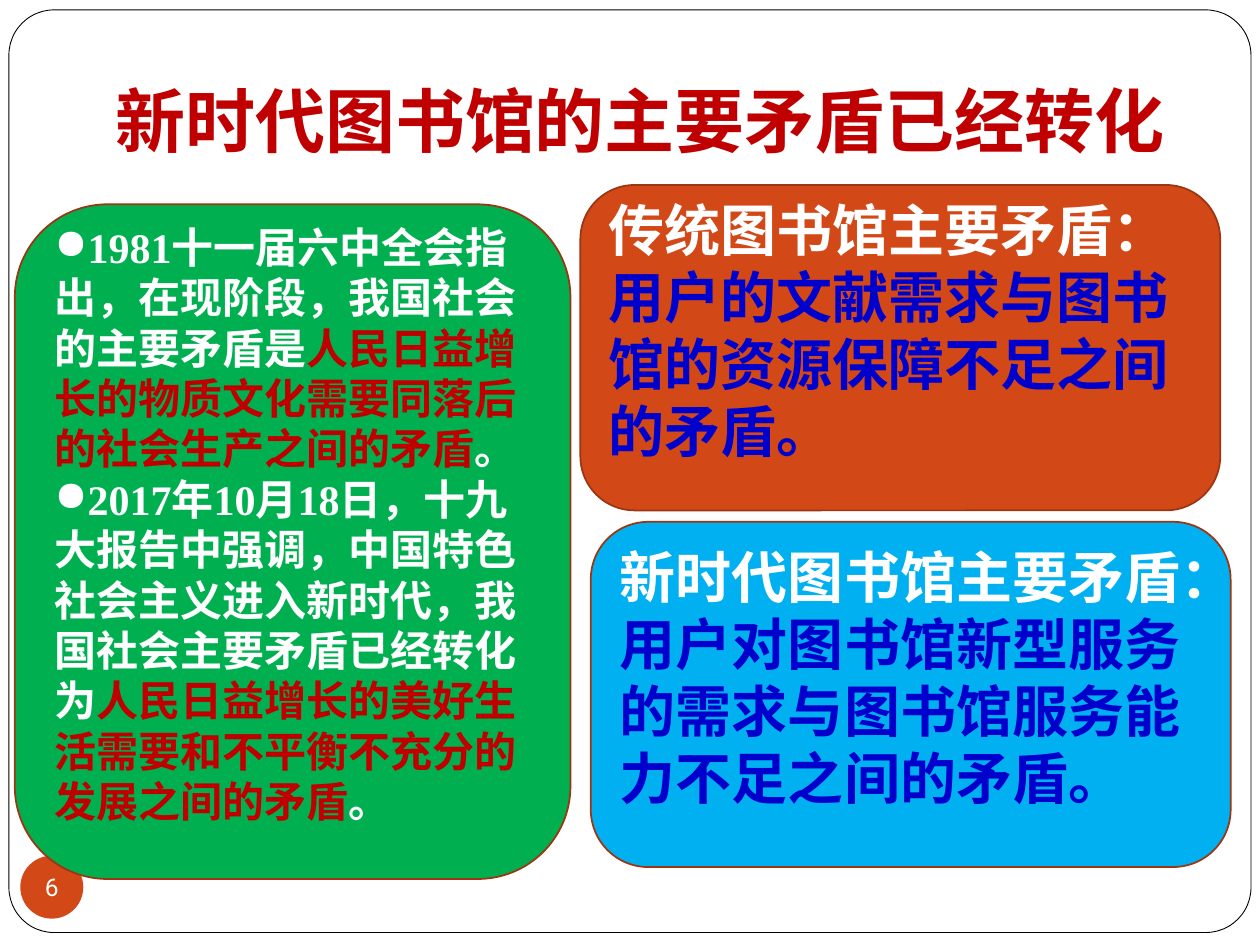
from lxml import etree
from pptx import Presentation
from pptx.dml.color import RGBColor
from pptx.enum import shapes, text
from pptx.oxml.ns import qn
from pptx.util import Cm, Pt

WHITE, RED, BLUE = "FFFFFF", "C00000", "0000CC"
ORANGE, BROWN = "D34817", "9C3511"


def color(value):
    return RGBColor.from_string(value)


def add_block(kind, left, top, width, height, fill, line=None, line_width=1):
    """Add a flat preset shape; no line colour means no outline."""
    shape = slide.shapes.add_shape(kind, Cm(left), Cm(top), Cm(width), Cm(height))
    shape.shadow.inherit = False
    shape.fill.solid()
    shape.fill.fore_color.rgb = color(fill)
    if line:
        shape.line.color.rgb = color(line)
        shape.line.width = Pt(line_width)
    else:
        shape.line.fill.background()
    return shape


presentation = Presentation()
presentation.slide_width, presentation.slide_height = Cm(25.4), Cm(19.05)
slide = presentation.slides.add_slide(presentation.slide_layouts[5])
rounded = shapes.MSO_SHAPE.ROUNDED_RECTANGLE

# Page frame, placed behind the title
frame = add_block(rounded, 0.18, 0.2, 25.04, 18.6, WHITE, "000000", 0.5)
frame.adjustments[0] = 0.049
slide.shapes._spTree.insert(2, frame._element)

title = slide.shapes.title
title.left, title.top, title.width, title.height = Cm(1.7), Cm(1.32), Cm(22.4), Cm(2.18)
title.text_frame.text = "新时代图书馆的主要矛盾已经转化"
title.text_frame.auto_size = text.MSO_AUTO_SIZE.NONE
title.text_frame.vertical_anchor = text.MSO_ANCHOR.BOTTOM
title.text_frame.margin_bottom = Cm(0.25)
paragraph = title.text_frame.paragraphs[0]
paragraph.alignment = text.PP_ALIGN.CENTER
paragraph.font.name = "Roboto"
paragraph.font.size = Pt(40)
paragraph.font.bold = True
paragraph.font.color.rgb = color(RED)

# Page number
badge = add_block(shapes.MSO_SHAPE.OVAL, 0.41, 17.25, 1.27, 1.27, ORANGE)
badge_frame = badge.text_frame
badge_frame.margin_left = badge_frame.margin_right = 0
badge_frame.margin_top = badge_frame.margin_bottom = 0
badge_frame.word_wrap = False
badge_frame.text = "6"
paragraph = badge_frame.paragraphs[0]
paragraph.alignment = text.PP_ALIGN.CENTER
paragraph.font.name = "Roboto"
paragraph.font.size = Pt(14)
paragraph.font.color.rgb = color(WHITE)

# Panels: position, fill, text size, bullet, paragraphs of (text, colour) runs
panels = [
    ((0.3, 4.12, 11.2, 13.6), "00B050", 24, "●", [
        [("1981十一届六中全会指出，在现阶段，我国社会的主要矛盾是", WHITE),
         ("人民日益增长的物质文化需要同落后的社会生产之间的矛盾", RED),
         ("。", WHITE)],
        [("2017年10月18日，十九大报告中强调，中国特色社会主义进入新时代，"
          "我国社会主要矛盾已经转化为", WHITE),
         ("人民日益增长的美好生活需要和不平衡不充分的发展之间的矛盾", RED),
         ("。", WHITE)],
    ]),
    ((11.7, 3.73, 12.9, 6.56), ORANGE, 32, None, [
        [("传统图书馆主要矛盾：", WHITE)],
        [("用户的文献需求与图书馆的资源保障不足之间的矛盾。", BLUE)],
    ]),
    ((11.91, 10.52, 12.9, 6.96), "00B0F0", 32, None, [
        [("新时代图书馆主要矛盾：", WHITE)],
        [("用户对图书馆新型服务的需求与图书馆服务能力不足之间的矛盾。", BLUE)],
    ]),
]
for box, fill, size, bullet, paragraphs in panels:
    text_frame = add_block(rounded, *box, fill, BROWN).text_frame
    text_frame.word_wrap = True
    text_frame.vertical_anchor = text.MSO_ANCHOR.MIDDLE
    text_frame.margin_bottom = Cm(0.85)
    for index, runs in enumerate(paragraphs):
        paragraph = text_frame.add_paragraph() if index else text_frame.paragraphs[0]
        paragraph.alignment = text.PP_ALIGN.LEFT
        if bullet:
            properties = paragraph._p.get_or_add_pPr()
            etree.SubElement(properties, qn("a:buChar")).set("char", bullet)
        paragraph.font.name = "Times New Roman"
        paragraph.font.size = Pt(size)
        paragraph.font.bold = True
        for wording, run_color in runs:
            run = paragraph.add_run()
            run.text = wording
            run.font.color.rgb = color(run_color)

presentation.save("out.pptx")
